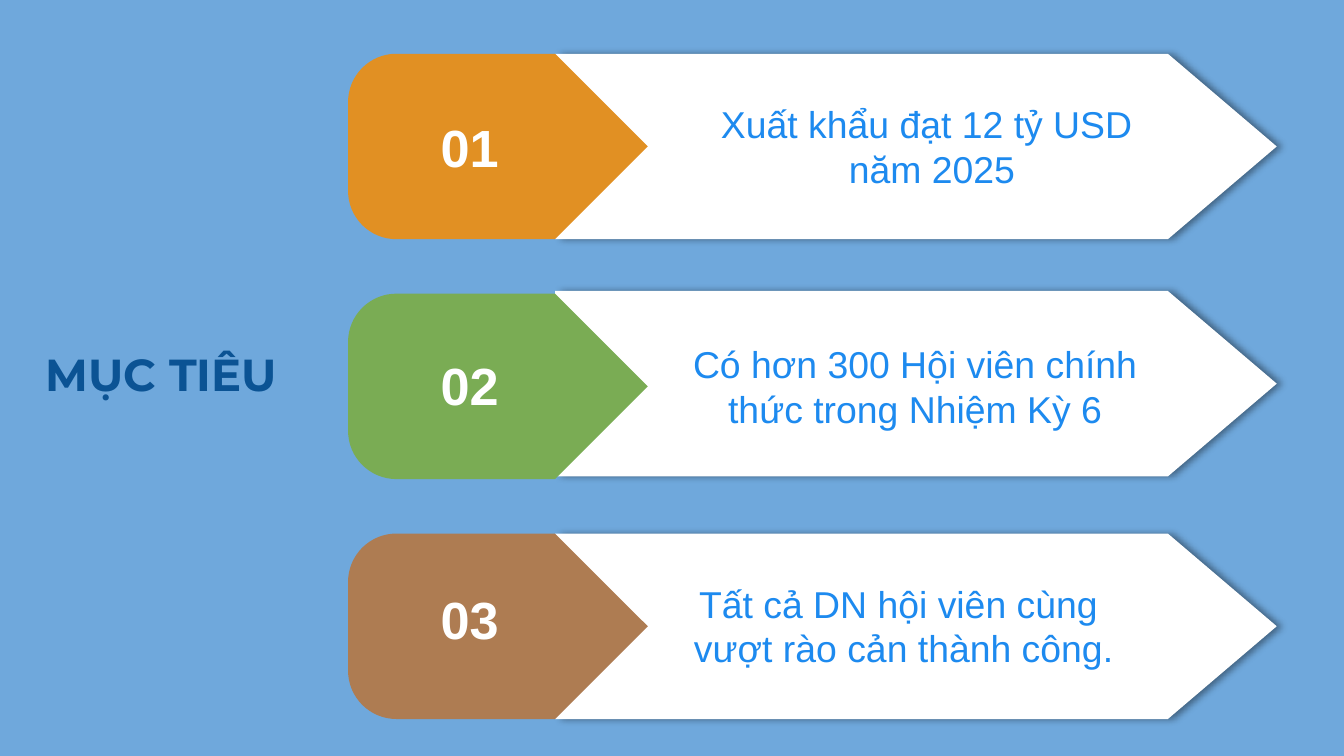
import math

from lxml import etree
from pptx import Presentation
from pptx.dml.color import RGBColor
from pptx.enum import shapes, text
from pptx.oxml import ns
from pptx.util import Inches, Pt

COLORS = {
    "sky": "6FA8DC", "navy": "0B5394", "blue": "1D8AEF", "white": "FFFFFF",
    "orange": "E19023", "green": "7AAC54", "brown": "AE7C52", "black": "000000",
}
ROW_LEFT, FIRST_TOP, LAST_TOP, ROW_H = 2.59, 0.4, 3.97, 1.38
TAG_W, TAG_RADIUS = 2.23, 0.36
ARROW_DX, ARROW_W, ARROW_TIP = 1.54, 5.37, 0.81

# number, tag colour, goal paragraphs, goal width, arrow shift, number shift
GOALS = [
    ("01", "orange", ["Xuất khẩu đạt 12 tỷ USD ", "năm 2025"], 4.13, 0, 0),
    ("02", "green", ["Có hơn 300 Hội viên chính thức trong Nhiệm Kỳ 6"], 3.88, -0.02, -0.02),
    ("03", "brown", ["Tất cả DN hội viên cùng  vượt rào cản thành công."], 3.71, 0, -0.06),
]


def rgb(name):
    return RGBColor.from_string(COLORS[name])


def paint(s, color):
    s.shadow.inherit = False
    s.fill.solid()
    s.fill.fore_color.rgb = rgb(color)
    s.line.fill.background()


def add_soft_shadow(s):
    effects = s._element.spPr.find(ns.qn("a:effectLst"))
    shadow = etree.SubElement(effects, ns.qn("a:outerShdw"), blurRad=str(Pt(4)),
                              dist=str(Pt(3)), dir="0", algn="l", rotWithShape="0")
    clr = etree.SubElement(shadow, ns.qn("a:srgbClr"), val=COLORS["black"])
    etree.SubElement(clr, ns.qn("a:alpha"), val="40000")


def write(p, words, font, size, color, bold=False):
    r = p.add_run()
    r.text = words
    r.font.name, r.font.size, r.font.bold = font, Pt(size), bold
    r.font.color.rgb = rgb(color)


def add_label(slide, x, y, w, h, lines, size, color, align, bold=False, wrap=True):
    s = slide.shapes.add_textbox(Inches(x), Inches(y), Inches(w), Inches(h))
    tf = s.text_frame
    tf.word_wrap = wrap
    tf.vertical_anchor = text.MSO_ANCHOR.MIDDLE
    for i, line in enumerate(lines):
        p = tf.add_paragraph() if i else tf.paragraphs[0]
        p.alignment = align
        write(p, line, "Arial", size, color, bold)


def add_tag(slide, x, y, w, h, color):
    """Pointed tag with rounded left corners."""
    def corner(cy, start):
        angles = [math.radians(start + 90 * i / 16) for i in range(17)]
        return [(x + TAG_RADIUS * (1 + math.cos(a)), cy + TAG_RADIUS * math.sin(a))
                for a in angles]

    shoulder = x + w - h / 2
    points = (corner(y + h - TAG_RADIUS, 90) + corner(y + TAG_RADIUS, 180)
              + [(shoulder, y), (x + w, y + h / 2), (shoulder, y + h)])
    points = [(Inches(px), Inches(py)) for px, py in points]
    builder = slide.shapes.build_freeform(*points[0])
    builder.add_line_segments(points[1:], close=True)
    paint(builder.convert_to_shape(), color)


def add_goal(slide, x, y, goal):
    number, color, lines, text_w, arrow_dy, number_dy = goal
    # White arrow
    s = slide.shapes.add_shape(
        shapes.MSO_SHAPE.PENTAGON, Inches(x + ARROW_DX), Inches(y + arrow_dy),
        Inches(ARROW_W), Inches(ROW_H))
    s.adjustments[0] = ARROW_TIP / ROW_H
    paint(s, "white")
    add_soft_shadow(s)
    # Coloured tag with its number
    add_tag(slide, x, y, TAG_W, ROW_H, color)
    middle = y + ROW_H / 2
    add_label(slide, x + 0.59, middle - 0.28 + number_dy, 0.64, 0.57, [number],
              28, "white", text.PP_ALIGN.LEFT, bold=True, wrap=False)
    # Goal wording
    add_label(slide, x + 2.28, middle - 0.39, text_w, 0.77, lines,
              20, "blue", text.PP_ALIGN.CENTER)


def add_title(slide, x, y, w, h):
    s = slide.shapes.title
    s.left, s.top, s.width, s.height = (Inches(v) for v in (x, y, w, h))
    tf = s.text_frame
    tf.auto_size = text.MSO_AUTO_SIZE.NONE
    tf.word_wrap = True
    tf.vertical_anchor = text.MSO_ANCHOR.TOP
    tf.margin_left = tf.margin_right = tf.margin_top = tf.margin_bottom = Inches(0.1)
    p = tf.paragraphs[0]
    p.alignment = text.PP_ALIGN.CENTER
    write(p, "MỤC TIÊU", "Montserrat", 24, "navy", bold=True)


def main():
    prs = Presentation()
    # Widescreen, 16:9
    prs.slide_width = Inches(10)
    prs.slide_height = Inches(10 * 9 / 16)
    slide = prs.slides.add_slide(prs.slide_layouts[5])
    slide.background.fill.solid()
    slide.background.fill.fore_color.rgb = rgb("sky")
    add_title(slide, -0.08, 2.48, 2.56, 0.58)
    pitch = (LAST_TOP - FIRST_TOP) / (len(GOALS) - 1)
    for i, goal in enumerate(GOALS):
        add_goal(slide, ROW_LEFT, FIRST_TOP + i * pitch, goal)
    prs.save("out.pptx")


if __name__ == "__main__":
    main()
